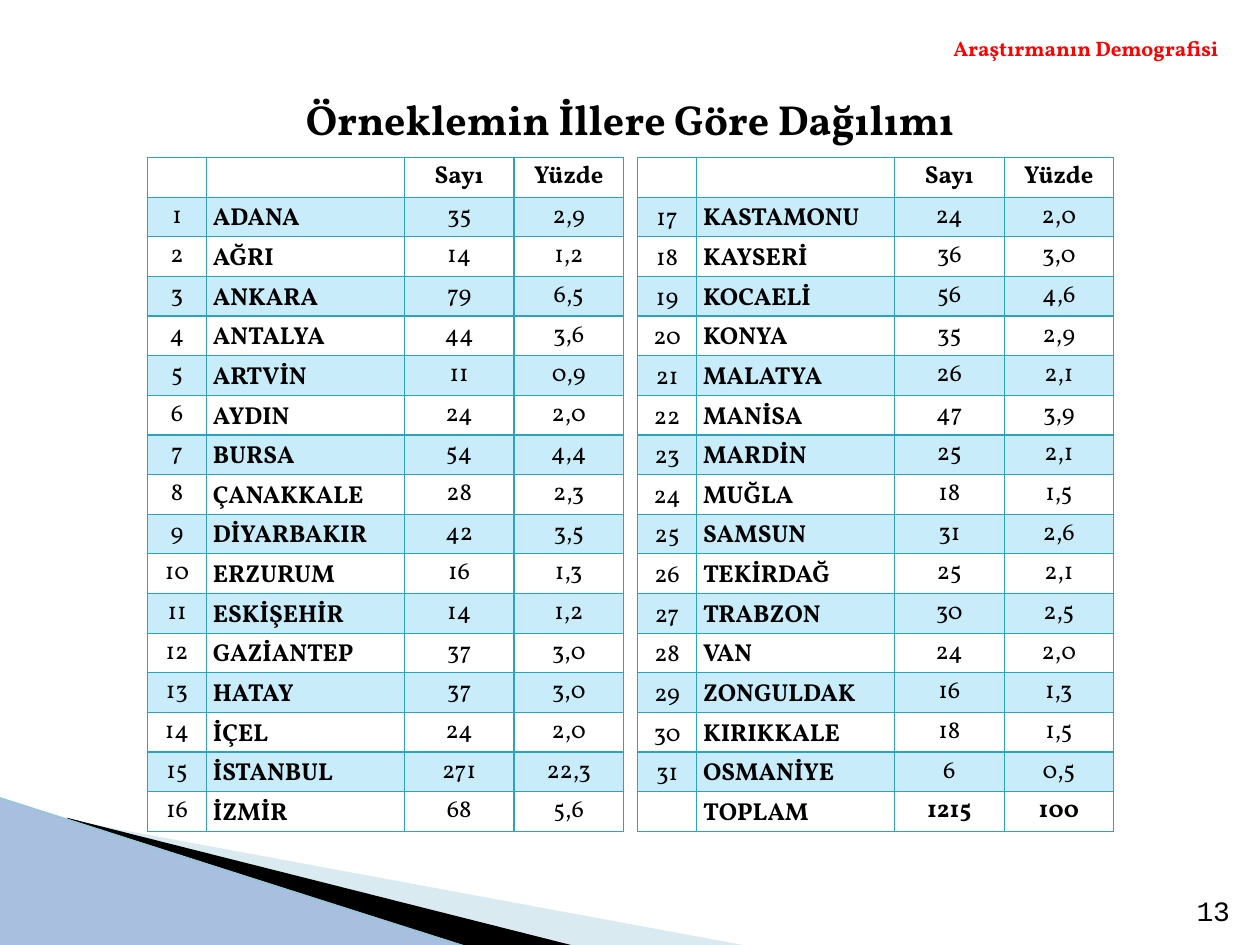
"""Build the slide that lists the sample's distribution by province."""
import pptx
import pptx.dml.color
import pptx.enum.shapes
import pptx.enum.text
import pptx.oxml
import pptx.oxml.ns
import pptx.util

Inches = pptx.util.Inches
Align = pptx.enum.text.PP_ALIGN
Anchor = pptx.enum.text.MSO_ANCHOR
qn = pptx.oxml.ns.qn

TITLE = "Örneklemin İllere Göre Dağılımı"
SECTION = "Araştırmanın Demografisi"
PAGE_NUMBER = "13"
HEADER = ("", "", "Sayı", "Yüzde")
LEFT_PROVINCES = [
    ("1", "ADANA", "35", "2,9"),
    ("2", "AĞRI", "14", "1,2"),
    ("3", "ANKARA", "79", "6,5"),
    ("4", "ANTALYA", "44", "3,6"),
    ("5", "ARTVİN", "11", "0,9"),
    ("6", "AYDIN", "24", "2,0"),
    ("7", "BURSA", "54", "4,4"),
    ("8", "ÇANAKKALE", "28", "2,3"),
    ("9", "DİYARBAKIR", "42", "3,5"),
    ("10", "ERZURUM", "16", "1,3"),
    ("11", "ESKİŞEHİR", "14", "1,2"),
    ("12", "GAZİANTEP", "37", "3,0"),
    ("13", "HATAY", "37", "3,0"),
    ("14", "İÇEL", "24", "2,0"),
    ("15", "İSTANBUL", "271", "22,3"),
    ("16", "İZMİR", "68", "5,6"),
]
RIGHT_PROVINCES = [
    ("17", "KASTAMONU", "24", "2,0"),
    ("18", "KAYSERİ", "36", "3,0"),
    ("19", "KOCAELİ", "56", "4,6"),
    ("20", "KONYA", "35", "2,9"),
    ("21", "MALATYA", "26", "2,1"),
    ("22", "MANİSA", "47", "3,9"),
    ("23", "MARDİN", "25", "2,1"),
    ("24", "MUĞLA", "18", "1,5"),
    ("25", "SAMSUN", "31", "2,6"),
    ("26", "TEKİRDAĞ", "25", "2,1"),
    ("27", "TRABZON", "30", "2,5"),
    ("28", "VAN", "24", "2,0"),
    ("29", "ZONGULDAK", "16", "1,3"),
    ("30", "KIRIKKALE", "18", "1,5"),
    ("31", "OSMANİYE", "6", "0,5"),
    ("", "TOPLAM", "1215", "100"),
]
TABLES = [
    (5.06, RIGHT_PROVINCES, Anchor.BOTTOM, 0),
    (1.17, LEFT_PROVINCES, Anchor.MIDDLE, 0.05),
]
TABLE_TOP, TABLE_HEIGHT = 1.25, 5.35
COLUMN_WIDTHS = (0.47, 1.57, 0.87, 0.87)
COLORS = {
    "text": "000000", "section": "FF0000", "border": "2DA2BF",
    "plain": "FFFFFF", "band": "C9ECFB", "pale": "A0CBDC",
    "black": "000000", "wedge": "A8BFDF", "edge": "97C5D8",
}
SWEEPS = [
    ("pale", 40, [(0.55, 6.51), (5.95, 7.51), (4.56, 7.51), (0.55, 6.5)]),
    ("black", 100, [(0.53, 6.49), (4.57, 7.51), (3.72, 7.52), (0.54, 6.5)]),
]


def rgb(name):
    return pptx.dml.color.RGBColor.from_string(COLORS[name])


def paint(shape, name):
    shape.fill.solid()
    shape.fill.fore_color.rgb = rgb(name)


def write(frame, text, size=14, font="Vollkorn", color="text", bold=False, align=Align.CENTER):
    para = frame.paragraphs[0]
    para.alignment = align
    span = para.add_run()
    span.text = text
    span.font.size = pptx.util.Pt(size)
    span.font.name = font
    span.font.bold = bold
    span.font.color.rgb = rgb(color)


def add_text(page, text, left, top, width, height, anchor=Anchor.TOP, **style):
    frame = page.shapes.add_textbox(*map(Inches, (left, top, width, height))).text_frame
    frame.word_wrap = True
    frame.vertical_anchor = anchor
    write(frame, text, **style)


def add_sweeps(page):
    for name, opacity, points in SWEEPS:
        start, *rest = [tuple(map(Inches, point)) for point in points]
        builder = page.shapes.build_freeform(*start)
        builder.add_line_segments(rest)
        sweep = builder.convert_to_shape()
        sweep.shadow.inherit = False
        paint(sweep, name)
        sweep.line.fill.background()
        if opacity < 100:
            color = next(sweep.element.iter(qn("a:srgbClr")))
            color.append(pptx.oxml.parse_xml(
                f'<a:alpha {pptx.oxml.ns.nsdecls("a")} val="{opacity * 1000}"/>'))
    wedge = page.shapes.add_shape(
        pptx.enum.shapes.MSO_SHAPE.RIGHT_TRIANGLE, *map(Inches, (-0.01, 6.33, 3.72, 1.18)))
    wedge.shadow.inherit = False
    paint(wedge, "wedge")
    wedge.line.fill.background()
    edge = page.shapes.add_connector(
        pptx.enum.shapes.MSO_CONNECTOR.STRAIGHT, *map(Inches, (-0.01, 6.33, 3.71, 7.52)))
    edge.line.color.rgb = rgb("edge")
    edge.line.width = pptx.util.Pt(0.95)
    edge.element.spPr.append(pptx.oxml.parse_xml(f'<a:effectLst {pptx.oxml.ns.nsdecls("a")}/>'))


def add_borders(table_frame):
    for properties in table_frame.element.iter(qn("a:tcPr")):
        for index, side in enumerate("LRTB"):
            properties.insert(index, pptx.oxml.parse_xml(
                f'<a:ln{side} {pptx.oxml.ns.nsdecls("a")} w="{pptx.util.Pt(0.75)}"><a:solidFill>'
                f'<a:srgbClr val="{COLORS["border"]}"/></a:solidFill></a:ln{side}>'))


def add_province_table(page, left, provinces, number_anchor, number_margin):
    rows = [HEADER] + provinces
    table_frame = page.shapes.add_table(
        len(rows), len(HEADER),
        *map(Inches, (left, TABLE_TOP, sum(COLUMN_WIDTHS), TABLE_HEIGHT)))
    table = table_frame.table
    table.first_row = table.horz_banding = False
    for column, width in zip(table.columns, COLUMN_WIDTHS):
        column.width = Inches(width)
    for r, row in enumerate(rows):
        for c, text in enumerate(row):
            cell = table.cell(r, c)
            is_name = c == 1
            side = 0 if r == 0 else number_margin if c == 0 else 0.05
            cell.margin_left = cell.margin_right = Inches(side)
            cell.margin_top = cell.margin_bottom = 0
            cell.vertical_anchor = (
                Anchor.MIDDLE if r == 0 or c > 1 else Anchor.BOTTOM if is_name else number_anchor)
            paint(cell, "band" if r % 2 else "plain")
            write(cell.text_frame, text, bold=r == 0 or is_name or row[1] == "TOPLAM",
                  align=Align.LEFT if is_name else Align.CENTER)
    add_borders(table_frame)


def main():
    deck = pptx.Presentation()
    deck.slide_width, deck.slide_height = Inches(10), Inches(7.5)
    page = deck.slides.add_slide(deck.slide_layouts[5])
    add_sweeps(page)
    title = page.shapes.title
    title.left, title.top, title.width, title.height = map(Inches, (0.5, 0.32, 9, 1.25))
    title.text_frame.vertical_anchor = Anchor.MIDDLE
    write(title.text_frame, TITLE, size=24, bold=True)
    title.element.getparent().append(title.element)
    add_text(page, PAGE_NUMBER, 9.14, 7.01, 0.72, 0.4, anchor=Anchor.BOTTOM,
             size=16, font="Courier New", align=Align.RIGHT)
    for table in TABLES:
        add_province_table(page, *table)
    add_text(page, SECTION, 0.86, 0.23, 8.91, 0.3,
             size=12, color="section", bold=True, align=Align.RIGHT)
    deck.save("out.pptx")


if __name__ == "__main__":
    main()
